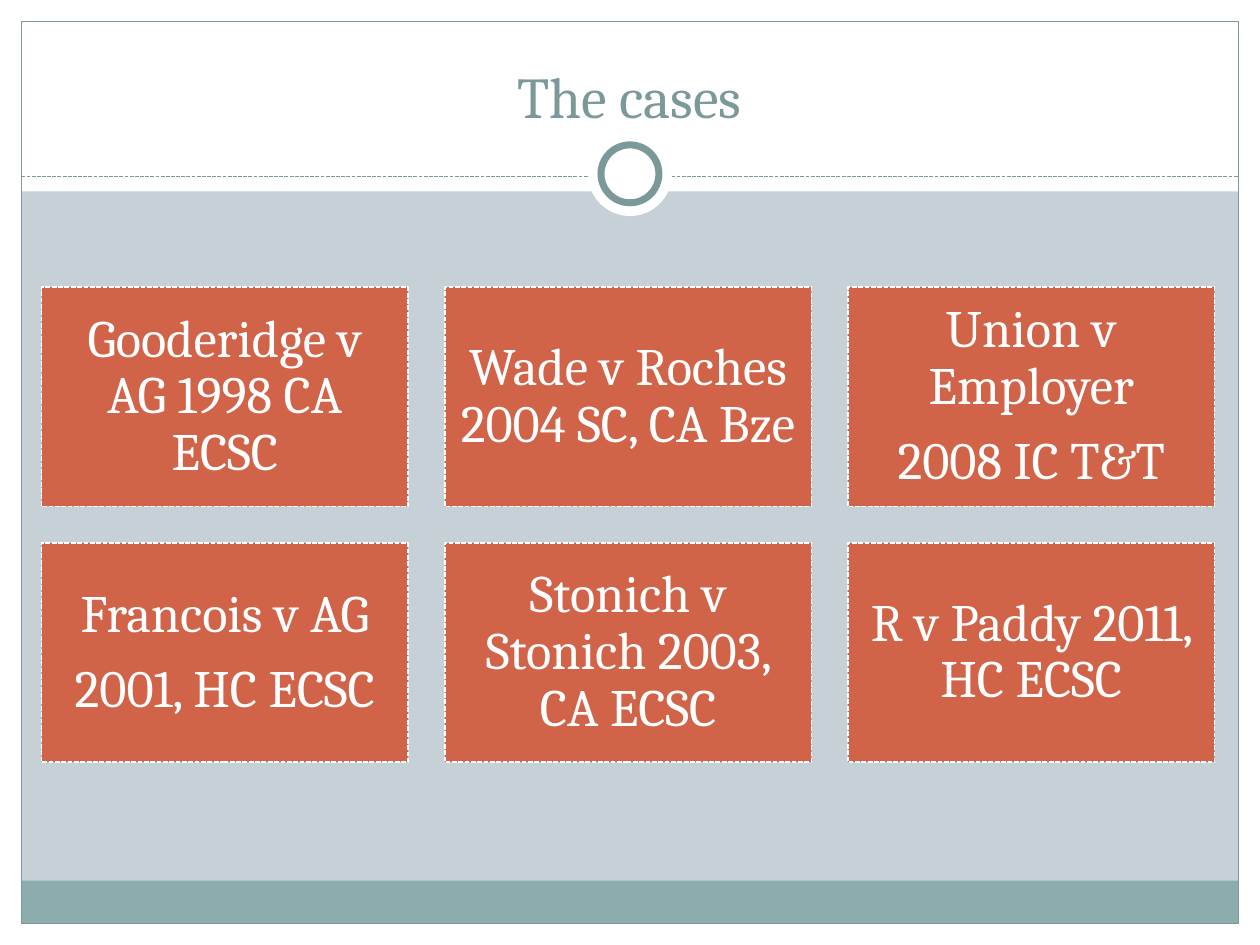
"""Build a slide that lists six court cases in a grid of boxes."""
from pptx import Presentation
from pptx.dml.color import RGBColor
from pptx.enum.dml import MSO_LINE
from pptx.enum.shapes import MSO_CONNECTOR, MSO_SHAPE
from pptx.enum.text import MSO_ANCHOR, PP_ALIGN
from pptx.oxml.ns import qn
from pptx.util import Inches, Pt
from lxml import etree

RECTANGLE, OVAL = MSO_SHAPE.RECTANGLE, MSO_SHAPE.OVAL
STRAIGHT = MSO_CONNECTOR.STRAIGHT
DASH = MSO_LINE.SQUARE_DOT
CENTER = PP_ALIGN.CENTER
MIDDLE, BOTTOM = MSO_ANCHOR.MIDDLE, MSO_ANCHOR.BOTTOM

WHITE = RGBColor(0xFF, 0xFF, 0xFF)
BACKGROUND = RGBColor(0xC5, 0xD1, 0xD7)
BAND = RGBColor(0x8C, 0xAD, 0xAE)
SLATE = RGBColor(0x7C, 0x99, 0x9A)
RUST = RGBColor(0xD1, 0x63, 0x49)
FONT = "Cambria"

TITLE = "The cases"
CASES = [
    ["Gooderidge v AG 1998 CA ECSC"],
    ["Wade v Roches 2004 SC, CA Bze"],
    ["Union v Employer", "2008 IC T&T"],
    ["Francois v AG", "2001, HC ECSC"],
    ["Stonich v Stonich 2003, CA ECSC"],
    ["R v Paddy 2011, HC ECSC"],
]

WIDTH, HEIGHT, MARGIN = 10, 7.5, 0.17
RIGHT = WIDTH - MARGIN
PANELS = [
    (0, HEIGHT - MARGIN, WIDTH, MARGIN, WHITE),
    (0, 0, WIDTH, 1.52, WHITE),
    (0, 0, MARGIN, HEIGHT, WHITE),
    (RIGHT, 0, MARGIN, HEIGHT, WHITE),
    (MARGIN, 6.99, WIDTH - 2 * MARGIN, 0.34, BAND),
]
RULE_Y = 1.4
RING_CENTER_Y = 1.38

COLUMNS = 3
GRID_LEFT, GRID_TOP = 0.33, 2.28
BOX_WIDTH, BOX_HEIGHT, GAP = 2.91, 1.74, 0.29


def add_panel(slide, kind, left, top, width, height, fill=None, line=None,
              line_width=0.75, dash=None):
    shape = slide.shapes.add_shape(
        kind, Inches(left), Inches(top), Inches(width), Inches(height))
    shape.shadow.inherit = False
    if fill is None:
        shape.fill.background()
    else:
        shape.fill.solid()
        shape.fill.fore_color.rgb = fill
    if line is None:
        shape.line.fill.background()
    else:
        shape.line.color.rgb = line
        shape.line.width = Pt(line_width)
        shape.line.dash_style = dash
    return shape


def add_disc(slide, diameter, **style):
    add_panel(slide, OVAL, (WIDTH - diameter) / 2, RING_CENTER_Y - diameter / 2,
              diameter, diameter, fill=WHITE, **style)


def write_text(shape, lines, size, color, anchor, spacing=1.0, after=0,
               side_inset=0.1, end_inset=0.05):
    frame = shape.text_frame
    frame.word_wrap = True
    frame.vertical_anchor = anchor
    frame.margin_left = frame.margin_right = Inches(side_inset)
    frame.margin_top = frame.margin_bottom = Inches(end_inset)
    frame.text = "\n".join(lines)
    for paragraph in frame.paragraphs:
        paragraph.alignment = CENTER
        paragraph.line_spacing = spacing
        paragraph.space_after = Pt(after)
        font = paragraph.runs[0].font
        font.name, font.size, font.color.rgb = FONT, Pt(size), color


def add_rule(slide):
    rule = slide.shapes.add_connector(
        STRAIGHT, Inches(MARGIN), Inches(RULE_Y), Inches(RIGHT), Inches(RULE_Y))
    rule.line.color.rgb = SLATE
    rule.line.width = Pt(0.75)
    rule.line.dash_style = DASH
    etree.SubElement(rule._element.spPr, qn("a:effectLst"))


def main():
    presentation = Presentation()
    presentation.slide_width = Inches(WIDTH)
    presentation.slide_height = Inches(HEIGHT)
    slide = presentation.slides.add_slide(presentation.slide_layouts[6])
    slide.background.fill.solid()
    slide.background.fill.fore_color.rgb = BACKGROUND

    for left, top, width, height, color in PANELS:
        add_panel(slide, RECTANGLE, left, top, width, height, fill=color)
    add_panel(slide, RECTANGLE, MARGIN, MARGIN, WIDTH - 2 * MARGIN,
              HEIGHT - 2 * MARGIN, line=SLATE)
    add_rule(slide)
    add_disc(slide, 0.67)
    add_disc(slide, 0.46, line=SLATE, line_width=4)

    title = slide.shapes.add_textbox(
        Inches(0.33), Inches(0.25), Inches(9.33), Inches(0.83))
    write_text(title, [TITLE], 33, SLATE, BOTTOM)

    for index, lines in enumerate(CASES):
        row, column = divmod(index, COLUMNS)
        box = add_panel(
            slide, RECTANGLE, GRID_LEFT + column * (BOX_WIDTH + GAP),
            GRID_TOP + row * (BOX_HEIGHT + GAP), BOX_WIDTH, BOX_HEIGHT,
            fill=RUST, line=WHITE, line_width=0.9, dash=DASH)
        write_text(box, lines, 30, WHITE, MIDDLE, spacing=0.9, after=10.5,
                   side_inset=0.12, end_inset=0.12)

    presentation.save("out.pptx")


if __name__ == "__main__":
    main()
